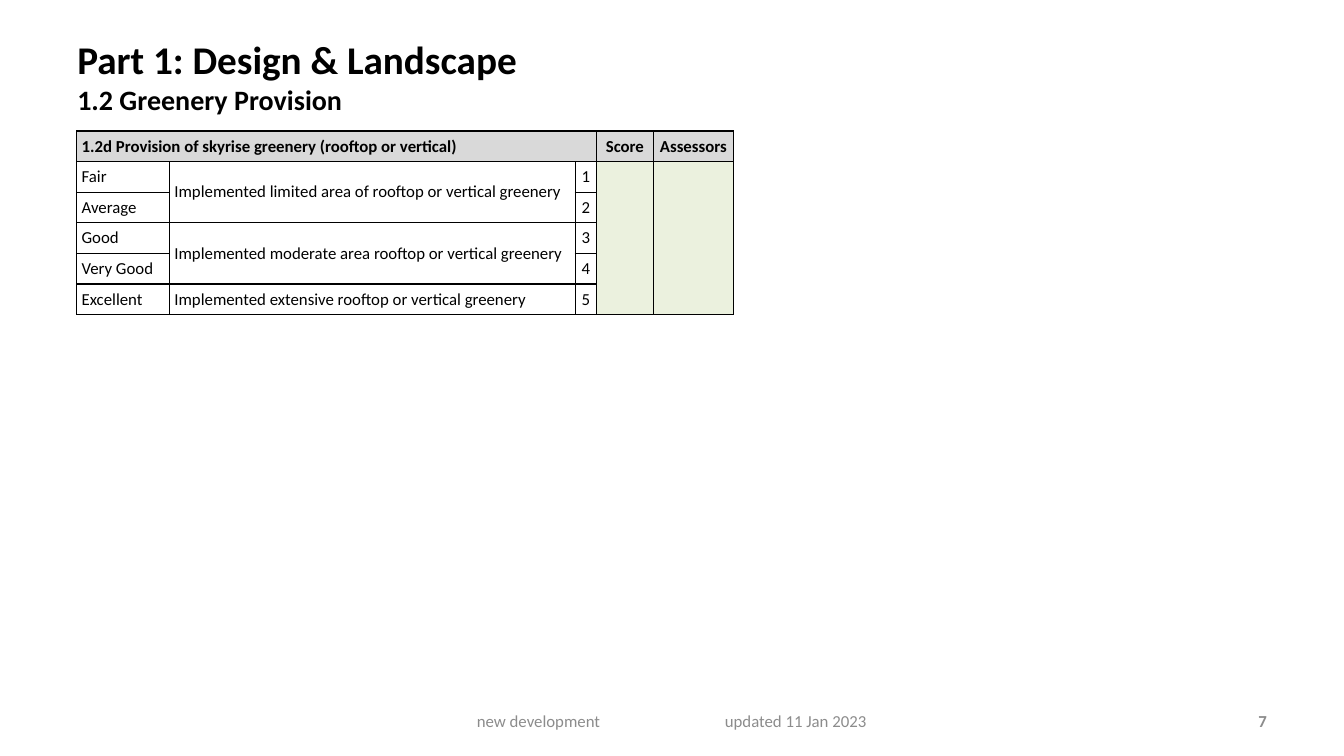
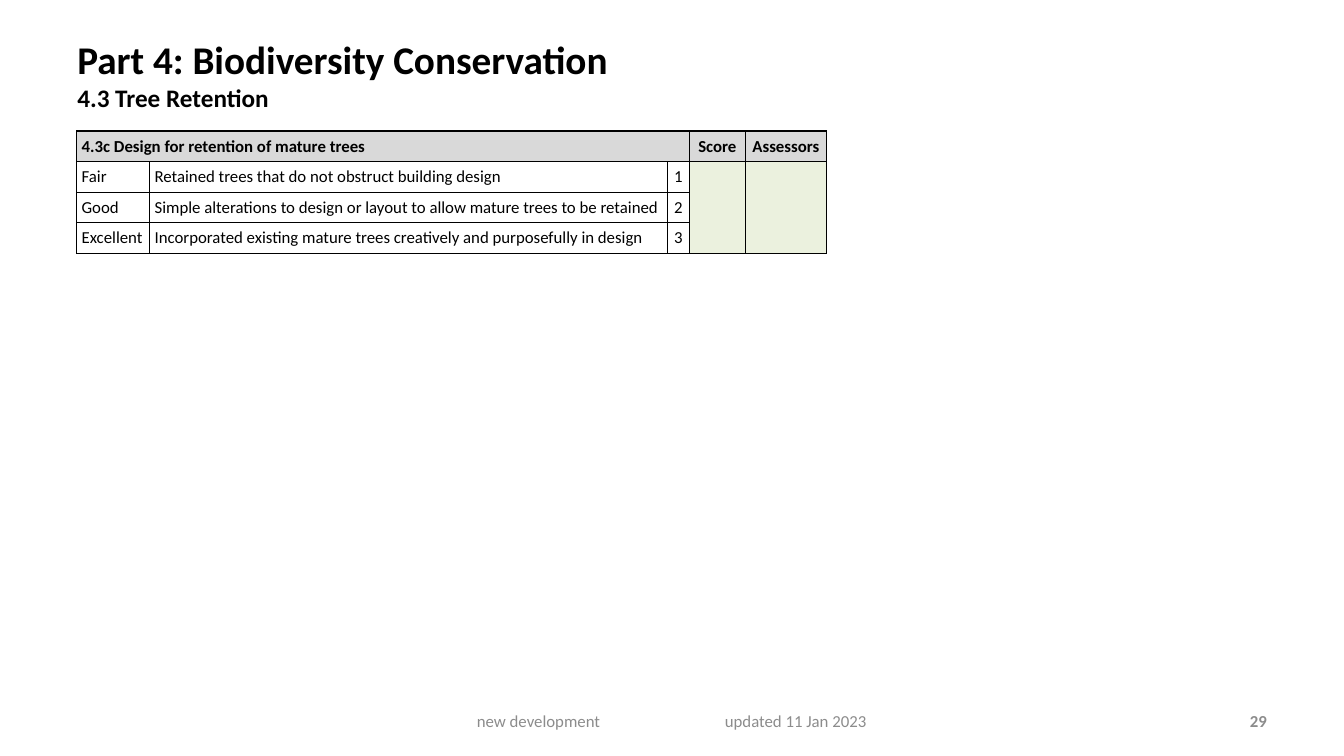
from dataclasses import dataclass

from lxml import etree
from pptx import Presentation
from pptx.dml import color
from pptx.enum import text as t
from pptx.oxml import ns
from pptx import util as u

# Shared look
FONT = "Calibri"
BLACK, GREY, WHITE = "000000", "8C8C8C", "FFFFFF"
HEADER_FILL, SCORE_FILL = "D9D9D9", "EBF1DE"
SLIDE_WIDTH, SLIDE_HEIGHT = u.Inches(13.33), u.Inches(7.5)
CELL_INSET = u.Inches(0.05)
FOOTER_INSET, FOOTER_TAB = u.Inches(0.17), u.Inches(2.46)

# Places as percent of the slide: left, top, width, height
TITLE_AREA = (5, 4, 77.7, 13.2)
NUMBER_AREA = (71.7, 92.67, 23.3, 5.33)
FOOTER_AREA = (34.2, 92.67, 31.6, 5.33)
TABLE_LEFT, TABLE_TOP, ROW_HEIGHT = 5.7, 17.33, 4
POINTS_WIDTH, SCORE_WIDTH, ASSESSORS_WIDTH = 1.6, 4.2, 6


@dataclass
class Level:
    name: str
    description: str | None  # None continues the description above


@dataclass
class Page:
    number: int
    heading: str
    section: str
    section_size: int
    criterion: str
    name_width: float
    description_width: float
    levels: list[Level]


PAGES = [
    Page(7, "Part 1: Design & Landscape", "1.2 Greenery Provision", 20,
         "1.2d Provision of skyrise greenery (rooftop or vertical)", 6.9, 30.2, [
             Level("Fair", "Implemented limited area of rooftop or vertical greenery"),
             Level("Average", None),
             Level("Good", "Implemented moderate area rooftop or vertical greenery"),
             Level("Very Good", None),
             Level("Excellent", "Implemented extensive rooftop or vertical greenery"),
         ]),
    Page(29, "Part 4: Biodiversity Conservation", "4.3 Tree Retention", 18,
         "4.3c Design for retention of mature trees", 5.43, 38.55, [
             Level("Fair", "Retained trees that do not obstruct building design"),
             Level("Good", "Simple alterations to design or layout to allow mature trees to be retained"),
             Level("Excellent", "Incorporated existing mature trees creatively and purposefully in design"),
         ]),
]


def rgb(value: str) -> color.RGBColor:
    return color.RGBColor.from_string(value)


def across(percent: float) -> int:
    return round(SLIDE_WIDTH * percent / 100)


def down(percent: float) -> int:
    return round(SLIDE_HEIGHT * percent / 100)


def area(left: float, top: float, width: float, height: float) -> tuple[int, int, int, int]:
    return across(left), down(top), across(width), down(height)


def write(para, words: str, *, size: float = 12, bold: bool = False,
          ink: str = BLACK, align=t.PP_ALIGN.LEFT) -> None:
    para.alignment = align
    span = para.add_run()
    span.text = words
    span.font.name, span.font.size, span.font.bold = FONT, u.Pt(size), bold
    span.font.color.rgb = rgb(ink)


def add_title(slide, page: Page) -> None:
    title = slide.shapes.title
    title.left, title.top, title.width, title.height = area(*TITLE_AREA)
    frame = title.text_frame
    frame.auto_size = t.MSO_AUTO_SIZE.NONE
    frame.vertical_anchor = t.MSO_ANCHOR.TOP
    para = frame.paragraphs[0]
    write(para, page.heading, size=28, bold=True)
    para.add_line_break()
    write(para, page.section, size=page.section_size, bold=True)


def add_label(slide, place: tuple[float, float, float, float]):
    frame = slide.shapes.add_textbox(*area(*place)).text_frame
    frame.word_wrap = True
    frame.vertical_anchor = t.MSO_ANCHOR.MIDDLE
    return frame


def add_footer(slide, number: int) -> None:
    number_para = add_label(slide, NUMBER_AREA).paragraphs[0]
    write(number_para, str(number), bold=True, ink=GREY, align=t.PP_ALIGN.RIGHT)

    frame = add_label(slide, FOOTER_AREA)
    frame.margin_left = FOOTER_INSET
    para = frame.paragraphs[0]
    tabs = etree.SubElement(para._p.get_or_add_pPr(), ns.qn("a:tabLst"))
    etree.SubElement(tabs, ns.qn("a:tab"), pos=str(FOOTER_TAB), algn="l")
    write(para, "new development\tupdated 11 Jan 2023", ink=GREY)


def style_cell(cell, fill: str) -> None:
    cell.margin_left = cell.margin_right = CELL_INSET
    cell.margin_top = cell.margin_bottom = CELL_INSET
    cell.vertical_anchor = t.MSO_ANCHOR.MIDDLE
    properties = cell._tc.get_or_add_tcPr()
    for side in ("a:lnL", "a:lnR", "a:lnT", "a:lnB"):
        line = etree.SubElement(properties, ns.qn(side), w=str(u.Pt(1)))
        paint = etree.SubElement(line, ns.qn("a:solidFill"))
        etree.SubElement(paint, ns.qn("a:srgbClr"), val=BLACK)
    cell.fill.solid()
    cell.fill.fore_color.rgb = rgb(fill)


def add_score_table(slide, page: Page) -> None:
    widths = (page.name_width, page.description_width,
              POINTS_WIDTH, SCORE_WIDTH, ASSESSORS_WIDTH)
    last = len(page.levels)
    table = slide.shapes.add_table(
        last + 1, len(widths),
        *area(TABLE_LEFT, TABLE_TOP, sum(widths), ROW_HEIGHT * (last + 1))).table
    table.first_row = table.horz_banding = False
    for column, width in zip(table.columns, widths):
        column.width = across(width)
    for row_index, row in enumerate(table.rows):
        row.height = down(ROW_HEIGHT)
        for column_index, cell in enumerate(row.cells):
            body_fill = SCORE_FILL if column_index > 2 else WHITE
            style_cell(cell, body_fill if row_index else HEADER_FILL)

    def put(row: int, column: int, words: str, **style) -> None:
        write(table.cell(row, column).text_frame.paragraphs[0], words, **style)

    # Header row and score columns
    table.cell(0, 0).merge(table.cell(0, 2))
    put(0, 0, page.criterion, bold=True)
    for column, heading in enumerate(("Score", "Assessors"), start=3):
        put(0, column, heading, bold=True, align=t.PP_ALIGN.CENTER)
        table.cell(1, column).merge(table.cell(last, column))

    # One row per level
    for row, level in enumerate(page.levels, start=1):
        put(row, 0, level.name)
        put(row, 2, str(row), align=t.PP_ALIGN.CENTER)
        if level.description is None:
            table.cell(row - 1, 1).merge(table.cell(row, 1))
        else:
            put(row, 1, level.description)


def main() -> None:
    deck = Presentation()
    deck.slide_width, deck.slide_height = SLIDE_WIDTH, SLIDE_HEIGHT
    title_only = deck.slide_layouts[5]
    for page in PAGES:
        slide = deck.slides.add_slide(title_only)
        add_title(slide, page)
        add_score_table(slide, page)
        add_footer(slide, page.number)
    deck.save("out.pptx")


if __name__ == "__main__":
    main()
